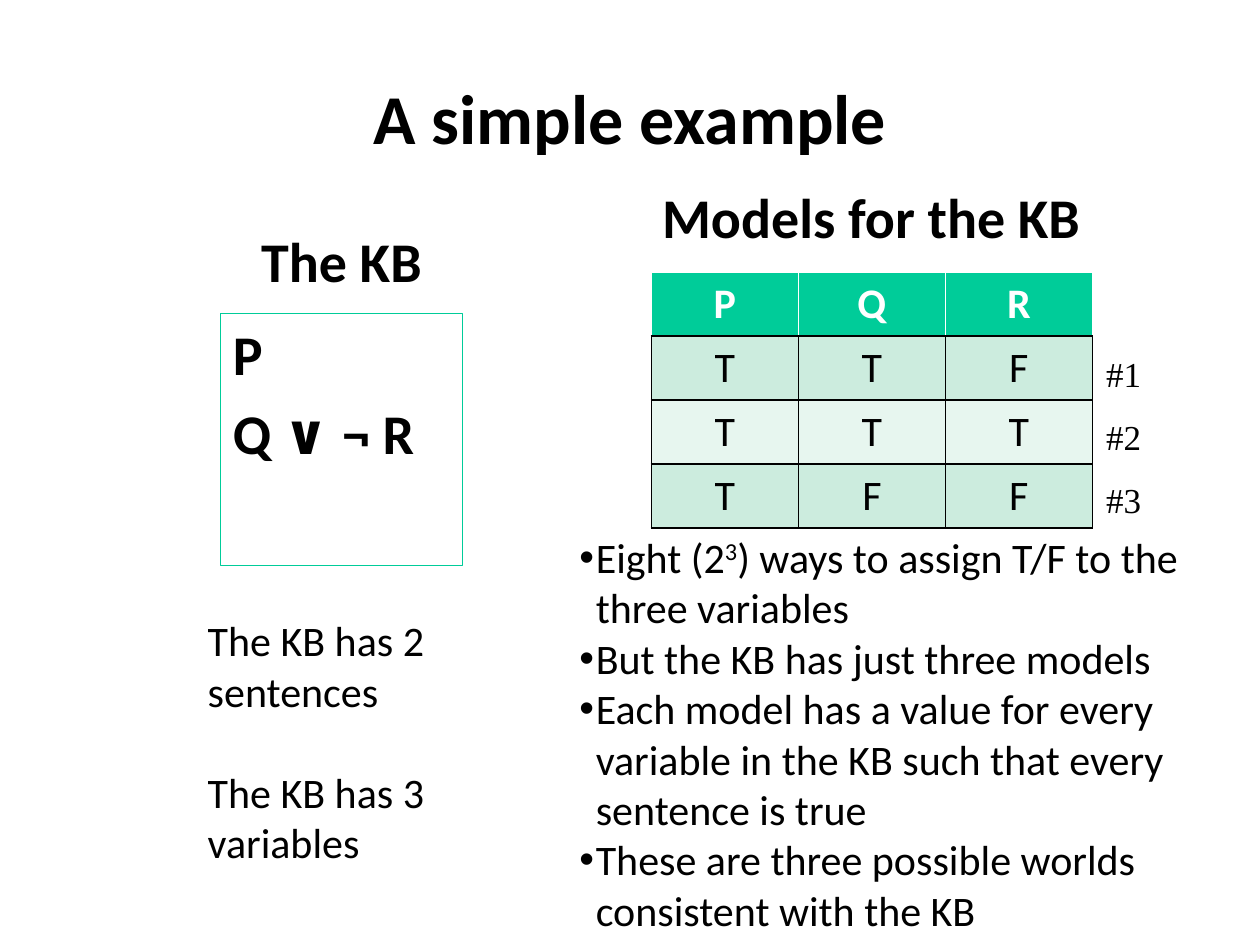
from dataclasses import dataclass

from lxml.etree import SubElement
from pptx import Presentation
from pptx.dml.color import RGBColor
from pptx.enum.shapes import MSO_SHAPE
from pptx.enum.text import MSO_ANCHOR, PP_ALIGN
from pptx.oxml.ns import qn
from pptx.util import Inches, Pt


@dataclass(frozen=True)
class Theme:
    body_font: str = "Calibri"
    label_font: str = "Times New Roman"
    ink: str = "000000"
    paper: str = "FFFFFF"
    accent: str = "00CC99"
    bands: tuple = ("CCECDE", "E7F6EF")
    title: int = 40
    heading: int = 32
    body: int = 24
    label: int = 20


class SlideBuilder:
    def __init__(self, slide, theme):
        self.slide = slide
        self.theme = theme

    def style(self, paragraph, size, bold=False, color=None, font=None,
              align=PP_ALIGN.LEFT, before=0):
        paragraph.alignment = align
        paragraph.space_before = Pt(before)
        paragraph.font.name = font or self.theme.body_font
        paragraph.font.size = Pt(size)
        paragraph.font.bold = bold
        paragraph.font.color.rgb = RGBColor.from_string(color or self.theme.ink)

    def fill_lines(self, frame, lines, size, **style):
        for index, line in enumerate(lines):
            paragraph = frame.paragraphs[0] if index == 0 else frame.add_paragraph()
            paragraph.text = line
            self.style(paragraph, size, **style)

    def text(self, box, lines, size, anchor=MSO_ANCHOR.TOP, wrap=True, **style):
        frame = self.slide.shapes.add_textbox(*map(Inches, box)).text_frame
        frame.word_wrap = wrap
        frame.vertical_anchor = anchor
        self.fill_lines(frame, lines, size, **style)
        return frame

    def heading(self, box, line):
        self.text(box, [line], self.theme.heading, MSO_ANCHOR.BOTTOM,
                  bold=True, align=PP_ALIGN.CENTER, before=6.4)

    def panel(self, box, lines):
        panel = self.slide.shapes.add_shape(MSO_SHAPE.RECTANGLE, *map(Inches, box))
        panel.shadow.inherit = False
        panel.fill.background()
        panel.line.color.rgb = RGBColor.from_string(self.theme.accent)
        panel.line.width = Pt(0.75)
        panel.text_frame.word_wrap = True
        panel.text_frame.vertical_anchor = MSO_ANCHOR.TOP
        self.fill_lines(panel.text_frame, lines, self.theme.heading,
                        bold=True, before=6.4)

    def bullets(self, box, items):
        """Each item is a list of (text, is_superscript) pieces."""
        frame = self.text(box, [""] * len(items), self.theme.body)
        for paragraph, pieces in zip(frame.paragraphs, items):
            properties = paragraph._p.get_or_add_pPr()
            properties.set("marL", str(Inches(0.13)))
            properties.set("indent", str(Inches(-0.13)))
            bullet_font = properties.makeelement(qn("a:buFont"), {"typeface": "Arial"})
            bullet = properties.makeelement(qn("a:buChar"), {"char": "•"})
            default_run = properties.find(qn("a:defRPr"))
            default_run.addprevious(bullet_font)
            default_run.addprevious(bullet)
            for text, is_superscript in pieces:
                run = paragraph.add_run()
                run.text = text
                if is_superscript:
                    run._r.get_or_add_rPr().set("baseline", "30000")

    def border(self, cell, sides):
        properties = cell._tc.get_or_add_tcPr()
        for side, color in zip("LRTB", sides):
            line = SubElement(properties, qn(f"a:ln{side}"), w=str(Pt(1)))
            fill = SubElement(line, qn("a:solidFill"))
            SubElement(fill, qn("a:srgbClr"), val=color)

    def table(self, box, rows):
        theme = self.theme
        table = self.slide.shapes.add_table(
            len(rows), len(rows[0]), *map(Inches, box)).table
        for r, row in enumerate(rows):
            is_header = r == 0
            edge = theme.paper if is_header else theme.ink
            fill = theme.accent if is_header else theme.bands[(r - 1) % 2]
            for c, value in enumerate(row):
                cell = table.cell(r, c)
                self.border(cell, (edge, edge, edge, theme.ink))
                cell.fill.solid()
                cell.fill.fore_color.rgb = RGBColor.from_string(fill)
                self.fill_lines(cell.text_frame, [value], theme.body, bold=is_header,
                                color=edge, align=PP_ALIGN.CENTER)


def main():
    theme = Theme()
    presentation = Presentation()
    presentation.slide_width = Inches(10)
    presentation.slide_height = Inches(7.5)
    slide = presentation.slides.add_slide(presentation.slide_layouts[6])
    builder = SlideBuilder(slide, theme)

    # Title
    builder.text((0.5, 0.3, 9, 1.25), ["A simple example"], theme.title,
                 MSO_ANCHOR.MIDDLE, bold=True, align=PP_ALIGN.CENTER)

    # Knowledge base and its summary
    builder.heading((1.75, 1.68, 1.92, 0.7), "The KB")
    builder.panel((1.75, 2.49, 1.92, 2), ["P", "Q ∨ ¬ R"])
    summary = builder.text((1.55, 4.83, 2.31, 2.12),
                           ["The KB has 2 sentences", "The KB has 3 variables"],
                           theme.body)
    summary.paragraphs[1].space_before = Pt(29)

    # Table of models
    builder.heading((5, 1.33, 3.83, 0.7), "Models for the KB")
    builder.table((5.17, 2.16, 3.5, 2.03), ["PQR", "TTF", "TTT", "TFF"])

    # Remarks on the models
    builder.bullets((4.5, 4.17, 5.21, 3.33), [
        [("Eight (2", False), ("3", True),
         (") ways to assign T/F to the three variables", False)],
        [("But the KB has just three models", False)],
        [("Each model has a value for every variable in the KB "
          "such that every sentence is true", False)],
        [("These are three possible worlds consistent with the KB", False)],
    ])

    # Model numbers beside the rows
    for index in range(3):
        builder.text((8.68, 2.75 + 0.5 * index, 0.48, 0.44), [f"#{index + 1}"],
                     theme.label, wrap=False, font=theme.label_font)

    presentation.save("out.pptx")


if __name__ == "__main__":
    main()
